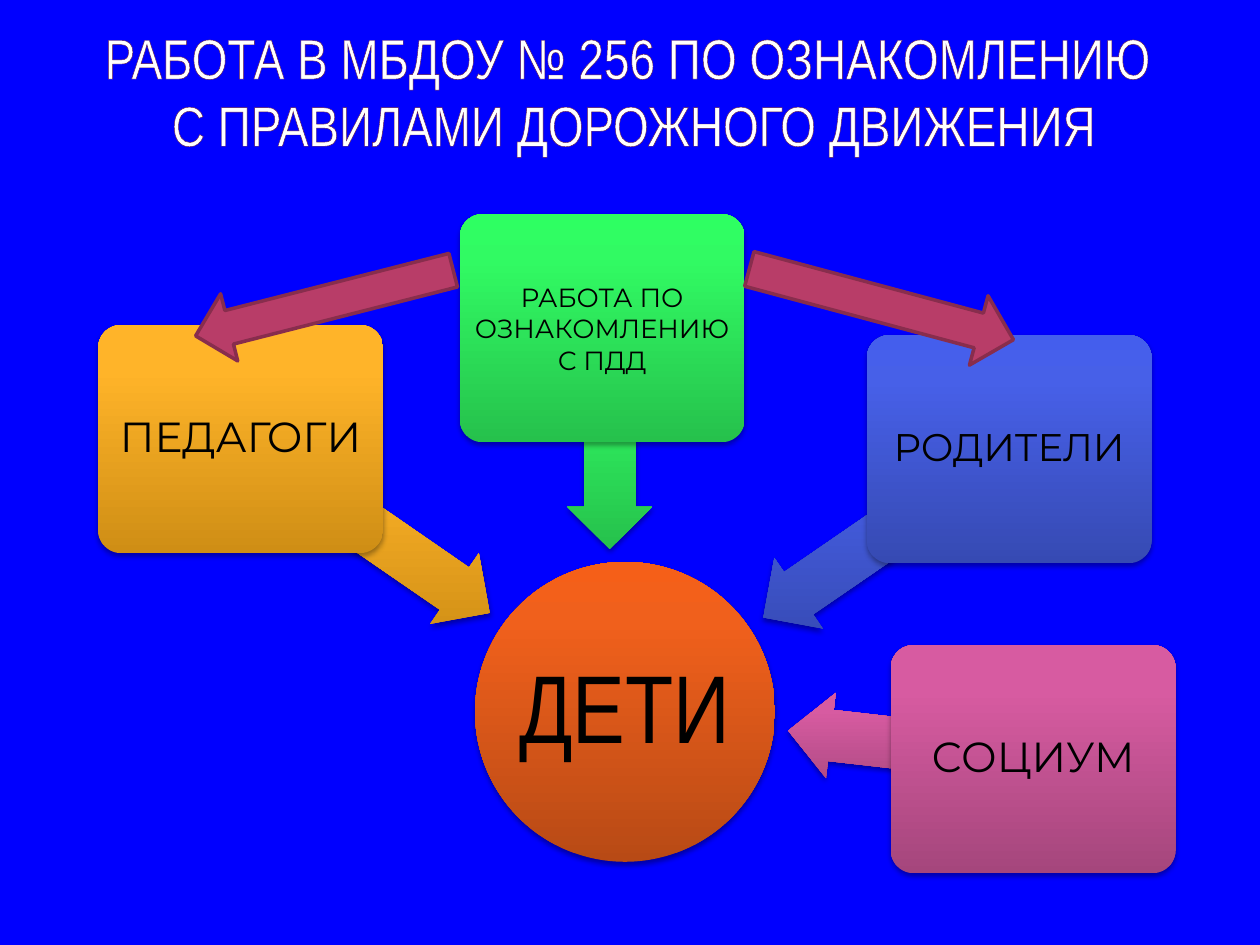
from dataclasses import dataclass

from lxml import etree
from pptx import Presentation
from pptx.dml.color import RGBColor
from pptx.enum import shapes, text
from pptx.oxml import parse_xml
from pptx.oxml.ns import nsdecls, qn
from pptx.util import Inches, Pt

SHAPE = shapes.MSO_SHAPE
BOX_WIDTH, BOX_HEIGHT = 2.26, 1.81
ARROW_HEIGHT = 0.68


@dataclass
class Arrow:
    left: float
    top: float
    width: float
    height: float
    rotation: float


@dataclass
class Box:
    label: str
    left: float
    top: float
    size: int
    colors: tuple[str, str, str]
    arrow: Arrow
    inset: float = 0.05
    line_spacing: float = 0.9


CHILDREN_COLORS = ("B84A15", "F0601C", "F55F18")
BOXES = [
    Box("ПЕДАГОГИ", 0.78, 2.58, 24, ("CF8E15", "FFB429", "FFB52B"),
        Arrow(1.69, 3.84, 2.41, ARROW_HEIGHT, 214.6)),
    Box("РАБОТА ПО ОЗНАКОМЛЕНИЮ С ПДД", 3.65, 1.7, 15, ("26C14C", "31FA63", "2EFF62"),
        Arrow(3.96, 3.14, 1.76, ARROW_HEIGHT, 270), inset=0.03, line_spacing=1.0),
    Box("РОДИТЕЛИ", 6.88, 2.66, 22, ("364AB3", "4760E8", "445EED"),
        Arrow(5.85, 3.89, 2.37, ARROW_HEIGHT, 325.5)),
    Box("СОЦИУМ", 7.07, 5.12, 24, ("A5467C", "D75BA1", "DA59A2"),
        Arrow(6.25, 5.57, 1.96, ARROW_HEIGHT, 6.5)),
]
RED_ARROWS = [Arrow(1.52, 2.13, 2.11, 0.55, 345.7), Arrow(5.91, 2.13, 2.17, 0.57, 195)]


def rgb(value: str) -> RGBColor:
    return RGBColor.from_string(value)


def add_shape(slide, kind, left: float, top: float, width: float, height: float):
    shape = slide.shapes.add_shape(
        kind, Inches(left), Inches(top), Inches(width), Inches(height))
    shape.shadow.inherit = False
    shape.line.fill.background()
    return shape


def shade(shape, colors: tuple[str, str, str]) -> None:
    """Give the shape an upright three-stop gradient and a soft shadow below."""
    stops = "".join(
        f'<a:gs pos="{position * 1000}"><a:srgbClr val="{color}"/></a:gs>'
        for position, color in zip((0, 80, 100), colors))
    gradient = parse_xml(
        f'<a:gradFill {nsdecls("a")} rotWithShape="0"><a:gsLst>{stops}</a:gsLst>'
        '<a:lin ang="16200000" scaled="0"/></a:gradFill>')
    properties = shape._element.spPr
    properties.find(qn("a:prstGeom")).addnext(gradient)
    properties.find(qn("a:effectLst")).append(parse_xml(
        f'<a:outerShdw {nsdecls("a")} blurRad="{Pt(3.1)}" dist="{Pt(1.8)}" dir="5400000" '
        'rotWithShape="0"><a:srgbClr val="000000"><a:alpha val="35000"/></a:srgbClr>'
        '</a:outerShdw>'))


def add_run(paragraph, content: str, font_name: str, size: int, color: str):
    run = paragraph.add_run()
    run.text = content
    run.font.name = font_name
    run.font.size = Pt(size)
    run.font.color.rgb = rgb(color)
    return run


def set_insets(frame, horizontal: float, vertical: float) -> None:
    frame.margin_left = frame.margin_right = Inches(horizontal)
    frame.margin_top = frame.margin_bottom = Inches(vertical)


def add_label(shape, content: str, font_name: str, size: int, inset: float,
              line_spacing: float, wrap: bool = True) -> None:
    frame = shape.text_frame
    frame.word_wrap = wrap
    frame.vertical_anchor = text.MSO_ANCHOR.MIDDLE
    set_insets(frame, inset, inset)
    paragraph = frame.paragraphs[0]
    paragraph.alignment = text.PP_ALIGN.CENTER
    paragraph.line_spacing = line_spacing
    add_run(paragraph, content, font_name, size, "000000")


def add_arrow(slide, arrow: Arrow):
    shape = add_shape(slide, SHAPE.LEFT_ARROW, arrow.left, arrow.top, arrow.width, arrow.height)
    shape.rotation = arrow.rotation
    return shape


def add_box(slide, box: Box) -> None:
    arrow = add_arrow(slide, box.arrow)
    arrow.adjustments[0] = 0.6
    shade(arrow, box.colors)
    shape = add_shape(slide, SHAPE.ROUNDED_RECTANGLE, box.left, box.top, BOX_WIDTH, BOX_HEIGHT)
    shape.adjustments[0] = 0.1
    shade(shape, box.colors)
    add_label(shape, box.label, "Montserrat", box.size, box.inset, box.line_spacing)


def add_red_arrow(slide, arrow: Arrow) -> None:
    shape = add_arrow(slide, arrow)
    shape.fill.solid()
    shape.fill.fore_color.rgb = rgb("B83D68")
    shape.line.color.rgb = rgb("882D4D")
    shape.line.width = Pt(2)


def outline_text(run, color: str, width: float) -> None:
    line = etree.Element(qn("a:ln"), w=str(Pt(width)))
    fill = etree.SubElement(line, qn("a:solidFill"))
    etree.SubElement(fill, qn("a:srgbClr"), val=color)
    run.font._element.insert(0, line)


def set_title(slide) -> None:
    title = slide.shapes.title
    title.left, title.top = Inches(0.31), Inches(0)
    title.width, title.height = Inches(9.45), Inches(1.25)
    frame = title.text_frame
    frame.word_wrap = True
    frame.auto_size = text.MSO_AUTO_SIZE.NONE
    frame.vertical_anchor = text.MSO_ANCHOR.BOTTOM
    set_insets(frame, 0.05, 0)
    paragraph = frame.paragraphs[0]
    paragraph.alignment = text.PP_ALIGN.CENTER
    lines = ("РАБОТА В МБДОУ № 256 ПО ОЗНАКОМЛЕНИЮ ", "С ПРАВИЛАМИ ДОРОЖНОГО ДВИЖЕНИЯ")
    for index, content in enumerate(lines):
        if index:
            paragraph.add_line_break()
        run = add_run(paragraph, content, "Arial Narrow", 32, "FFFFFF")
        outline_text(run, "5E1A50", 0.04)


def main() -> None:
    presentation = Presentation()
    presentation.slide_width, presentation.slide_height = Inches(10), Inches(7.5)
    slide = presentation.slides.add_slide(presentation.slide_layouts[5])
    slide.background.fill.solid()
    slide.background.fill.fore_color.rgb = rgb("0000FF")
    set_title(slide)

    children = add_shape(slide, SHAPE.OVAL, 3.77, 4.46, 2.38, 2.38)
    shade(children, CHILDREN_COLORS)
    add_label(children, "ДЕТИ", "Arial Narrow", 55, 0.04, 0.9, wrap=False)

    for box in BOXES:
        add_box(slide, box)
    for arrow in RED_ARROWS:
        add_red_arrow(slide, arrow)
    presentation.save("out.pptx")


if __name__ == "__main__":
    main()
